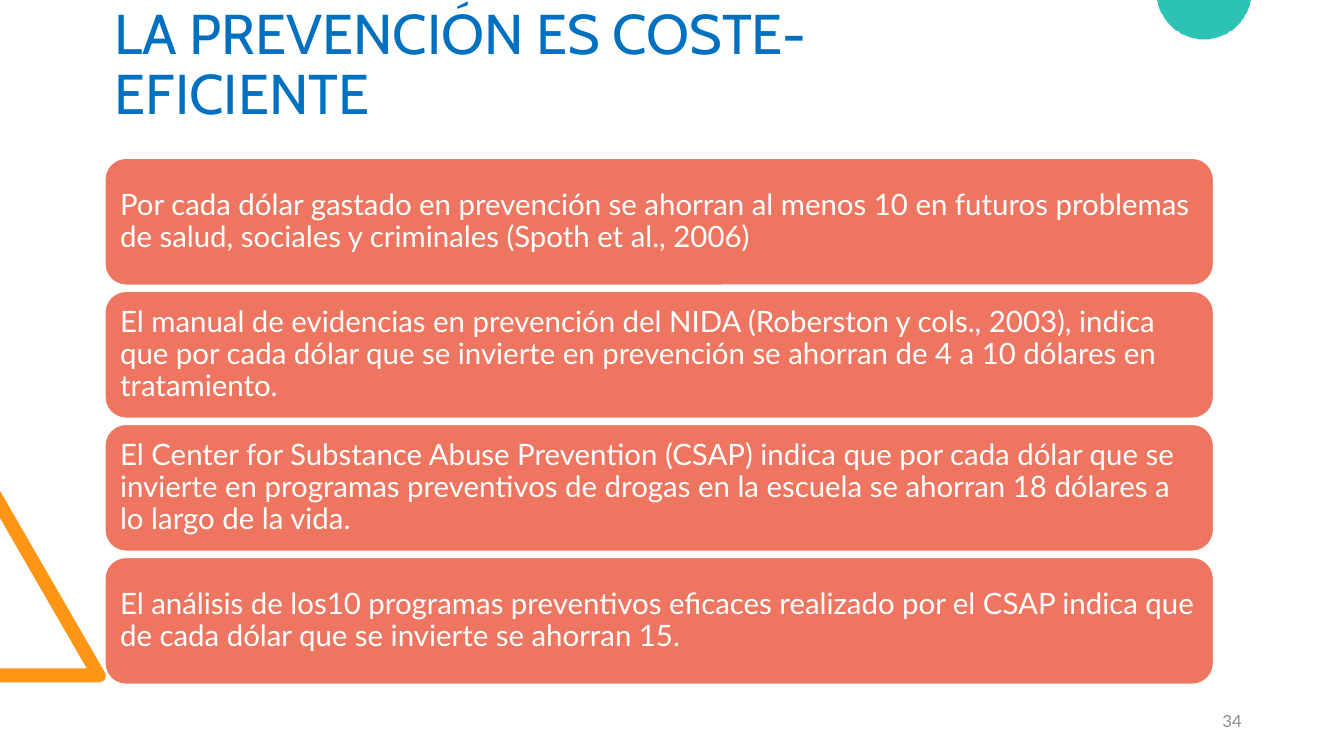
from math import asin, cos, pi, sin

from pptx import Presentation
from pptx.dml.color import RGBColor
from pptx.enum.shapes import MSO_SHAPE
from pptx.enum.text import MSO_ANCHOR, MSO_AUTO_SIZE, PP_ALIGN
from pptx.util import Pt

PX = 9144  # EMU per px, 100 px to the inch

WHITE = RGBColor(0xFF, 0xFF, 0xFF)
BLUE = RGBColor(0x00, 0x70, 0xC0)
CORAL = RGBColor(0xEE, 0x76, 0x61)
ORANGE = RGBColor(0xFF, 0x95, 0x14)
TEAL = RGBColor(0x2C, 0xC3, 0xB4)
GREY = RGBColor(0x8C, 0x8C, 0x8C)

FACTS = [
    "Por cada dólar gastado en prevención se ahorran al menos 10 en futuros problemas de salud, "
    "sociales y criminales (Spoth et al., 2006)",
    "El manual de evidencias en prevención del NIDA (Roberston y cols., 2003), indica que por cada "
    "dólar que se invierte en prevención se ahorran de 4 a 10 dólares en tratamiento.",
    "El Center for Substance Abuse Prevention (CSAP) indica que por cada dólar que se invierte en "
    "programas preventivos de drogas en la escuela se ahorran 18 dólares a lo largo de la vida.",
    "El análisis de los10 programas preventivos eficaces realizado por el CSAP indica que de cada "
    "dólar que se invierte se ahorran 15.",
]


def add_outline(points, color):
    """Draw a closed, filled shape through points given in px."""
    builder = s.shapes.build_freeform(*points[0], scale=PX)
    builder.add_line_segments(points[1:], close=True)
    sp = builder.convert_to_shape()
    sp.shadow.inherit = False
    sp.fill.solid()
    sp.fill.fore_color.rgb = color
    sp.line.fill.background()


def style_text(tf, font, size, color, align=PP_ALIGN.LEFT, spacing=0.9):
    tf.word_wrap = True
    tf.auto_size = MSO_AUTO_SIZE.NONE
    p = tf.paragraphs[0]
    p.alignment = align
    p.line_spacing = spacing
    f = p.runs[0].font
    f.name, f.size, f.color.rgb = font, Pt(size), color


prs = Presentation()
prs.slide_width, prs.slide_height = 12192000, 750 * PX
s = prs.slides.add_slide(prs.slide_layouts[5])

# Corner triangle and the half disc at the top edge
add_outline([(0, 487), (104, 667), (105, 670), (104, 674), (102, 676), (98, 677),
             (0, 677), (0, 663), (86, 663), (0, 514)], ORANGE)

cx, cy, radius, steps = 1194.5, -8, 47, 48
start = asin(-cy / radius)
angles = [start + (pi - 2 * start) * i / steps for i in range(steps + 1)]
add_outline([(cx + radius * cos(a), cy + radius * sin(a)) for a in angles], TEAL)

# Title
title = s.shapes.title
title.left, title.top, title.width, title.height = [v * PX for v in (104, 9, 921, 122)]
tf = title.text_frame
tf.text = "LA PREVENCIÓN ES COSTE-EFICIENTE"
tf.vertical_anchor = MSO_ANCHOR.BOTTOM
style_text(tf, "Cabin", 40, BLUE)

# Slide number
number = s.shapes.add_textbox(942 * PX, 695 * PX, 300 * PX, 40 * PX)
tf = number.text_frame
tf.text = "34"
tf.vertical_anchor = MSO_ANCHOR.MIDDLE
style_text(tf, "Lato", 12, GREY, PP_ALIGN.RIGHT, 1.0)

# Fact cards
for i, fact in enumerate(FACTS):
    card = s.shapes.add_shape(MSO_SHAPE.ROUNDED_RECTANGLE,
                              104 * PX, (157 + 132 * i) * PX, 1100 * PX, 126 * PX)
    card.shadow.inherit = False
    card.fill.solid()
    card.fill.fore_color.rgb = CORAL
    card.line.color.rgb = WHITE
    card.line.width = Pt(1)
    tf = card.text_frame
    tf.text = fact
    tf.vertical_anchor = MSO_ANCHOR.MIDDLE
    # A rounded rectangle already insets its text by 6 px
    tf.margin_left = tf.margin_right = tf.margin_top = tf.margin_bottom = 9 * PX
    style_text(tf, "Lato", 21, WHITE)

prs.save("out.pptx")
